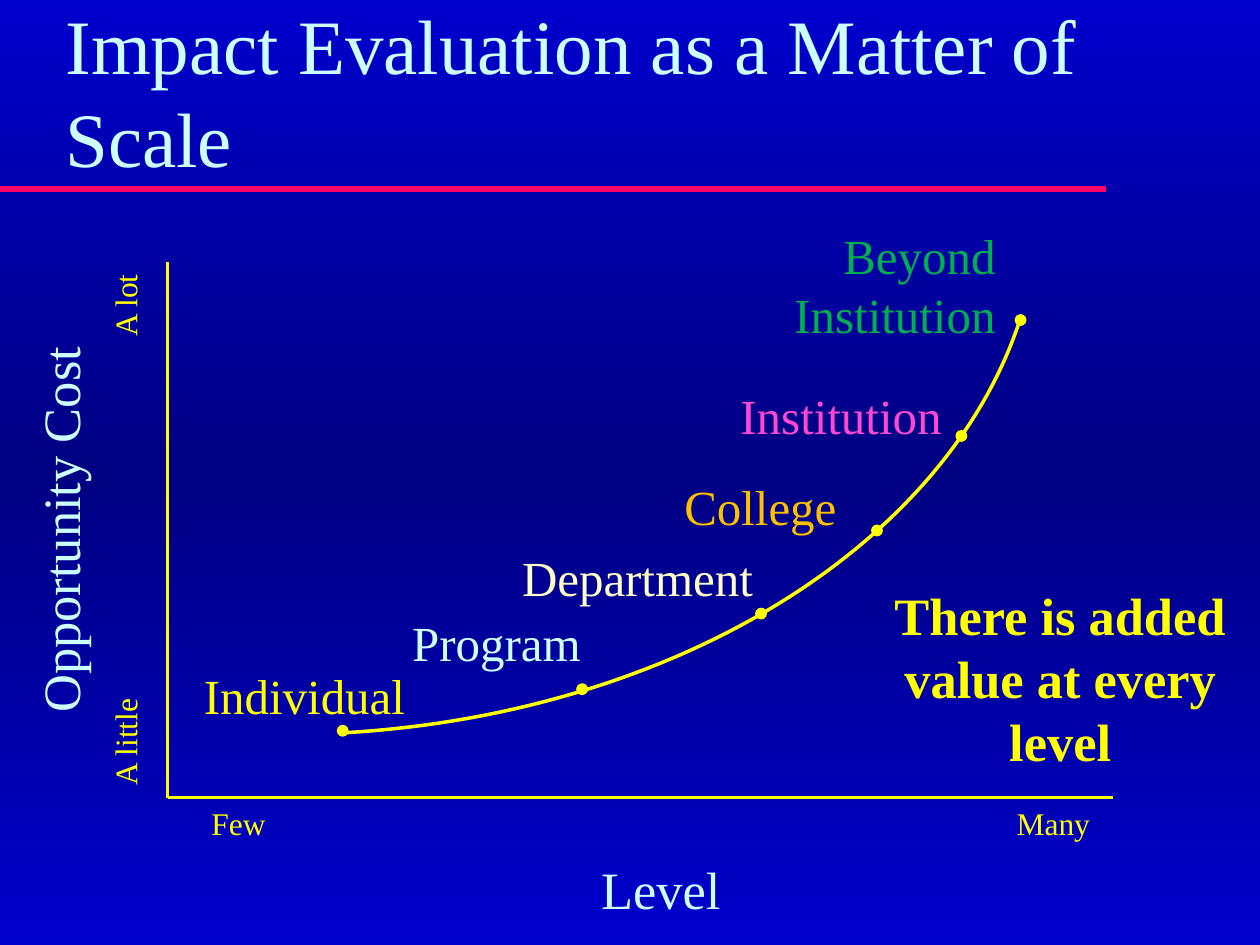
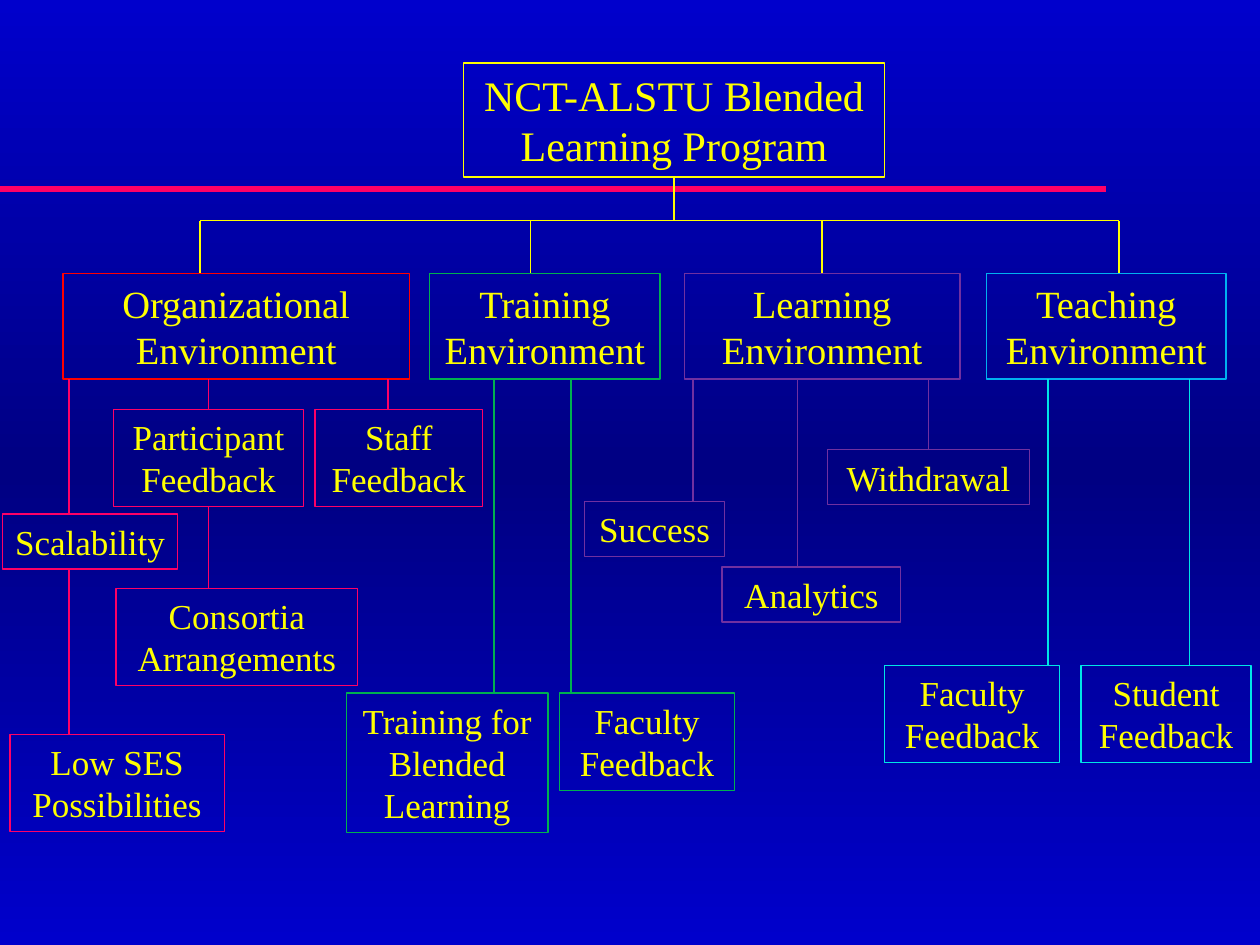
"""Build two slides: impact evaluation by scale, and the blended learning program tree."""
from copy import deepcopy
from math import cos, radians, sin

from lxml.etree import SubElement
from pptx import Presentation
from pptx.dml.color import RGBColor
from pptx.enum.shapes import MSO_CONNECTOR, MSO_SHAPE
from pptx.enum.text import MSO_ANCHOR, MSO_AUTO_SIZE, PP_ALIGN
from pptx.oxml.ns import qn
from pptx.util import Inches, Pt

FONT = "Times New Roman"
COLORS = {
    "edge": "0000CC", "mid": "000082", "rule": "FF0066", "yellow": "FFFF00",
    "ice": "CCFFFF", "cream": "FFFFC5", "gold": "FFC000", "pink": "FF47D1",
    "green": "00B050", "red": "FF0000", "purple": "7030A0", "blue": "00B0F0",
    "aqua": "00E5E6",
}
ALIGN = {"l": PP_ALIGN.LEFT, "c": PP_ALIGN.CENTER, "r": PP_ALIGN.RIGHT}

TITLE = "Impact Evaluation as a Matter of Scale"
AXIS = {"left": 1.33, "top": 2.08, "right": 8.83, "base": 6.33}
CURVE = {"x": 2.25, "y": 1.58, "wide": 6, "high": 4.25, "start": 85.5, "end": 12.8, "steps": 60}
NOTES = [
    ("Opportunity Cost", (0.17, 2.08, 0.71, 4.25), dict(size=30, color="ice", align="c", vert="vert270")),
    ("A little", (0.79, 5, 0.61, 1.33), dict(size=18, vert="vert270")),
    ("A lot", (0.79, 2.08, 0.61, 1.33), dict(size=18, align="r", vert="vert270")),
    ("Level", (4.58, 6.75, 1.33, 0.61), dict(size=30, color="ice", align="c")),
    ("Few", (1.58, 6.33, 1, 0.5), dict(size=18)),
    ("Many", (7.08, 6.33, 1.67, 0.5), dict(size=18, align="r")),
    ("There is added value at every level", (6.83, 4.58, 3.17, 1.62), dict(size=30, bold=True, align="c")),
]
STEPS = [
    ("Individual", (1.52, 5.23, 1.92, 0.57), "yellow", "l", (2.68, 5.76)),
    ("Program", (3.15, 4.81, 1.58, 0.57), "ice", "c", (4.58, 5.43)),
    ("Department", (3.98, 4.3, 2.16, 0.57), "cream", "c", (6, 4.83)),
    ("College", (5.08, 3.73, 1.91, 0.57), "gold", "c", (6.92, 4.17)),
    ("Institution", (5.72, 3.01, 1.91, 0.57), "pink", "c", (7.59, 3.42)),
    ("Beyond\nInstitution", (4.73, 1.74, 3.27, 1.04), "green", "r", (8.06, 2.5)),
]

ROOT = ("NCT-ALSTU Blended Learning Program", 3.68, 0.5, 3.34)
TRUNK, BAR, TIER = 5.36, 1.75, 2.17
BRANCHES = [
    ("Organizational Environment", 0.5, 2.75, 1.59, "red", "rule", [
        ("Scalability", 0.02, 4.08, 1.39, 1, 0.55, [
            ("Low SES\nPossibilities", 0.08, 5.83, 1.7, 2, 0.55, [])]),
        ("Participant Feedback", 0.9, 3.25, 1.51, 2, 1.67, [
            ("Consortia Arrangements", 0.92, 4.67, 1.92, 2, 1.66, [])]),
        ("Staff Feedback", 2.5, 3.25, 1.33, 2, 3.08, []),
    ]),
    ("Training Environment", 3.41, 1.83, 4.21, "green", "green", [
        ("Training for Blended Learning", 2.75, 5.5, 1.6, 3, 3.92, []),
        ("Faculty Feedback", 4.44, 5.5, 1.39, 2, 4.53, []),
    ]),
    ("Learning Environment", 5.43, 2.19, 6.53, "purple", "purple", [
        ("Success", 4.64, 3.98, 1.11, 1, 5.5, []),
        ("Analytics", 5.73, 4.5, 1.42, 1, 6.33, []),
        ("Withdrawal", 6.57, 3.57, 1.6, 1, 7.36, []),
    ]),
    ("Teaching Environment", 7.83, 1.9, 8.88, "blue", "aqua", [
        ("Faculty Feedback", 7.02, 5.28, 1.39, 2, 8.32, []),
        ("Student Feedback", 8.58, 5.28, 1.35, 2, 9.44, []),
    ]),
]


def hue(name):
    return RGBColor.from_string(COLORS[name])


def write(shape, text, size=28, color="yellow", bold=False, align="l",
          anchor=MSO_ANCHOR.TOP, vert=None, inset=0.1):
    frame = shape.text_frame
    frame.text = text
    frame.word_wrap = True
    frame.auto_size = MSO_AUTO_SIZE.NONE
    frame.vertical_anchor = anchor
    frame.margin_left = frame.margin_right = Inches(inset)
    if vert:
        frame._txBody.bodyPr.set("vert", vert)
    for para in frame.paragraphs:
        para.alignment = ALIGN[align]
        font = para.runs[0].font
        font.name, font.size, font.bold = FONT, Pt(size), bold
        font.color.rgb = hue(color)


def label(slide, text, place, **style):
    write(slide.shapes.add_textbox(*map(Inches, place)), text, **style)


def dress(shape, color, width, fill=None):
    shape.shadow.inherit = False
    if fill:
        shape.fill.solid()
        shape.fill.fore_color.rgb = hue(fill)
    else:
        shape.fill.background()
    shape.line.color.rgb = hue(color)
    shape.line.width = Pt(width)


def draw(slide, kind, place, *look):
    shape = slide.shapes.add_shape(kind, *map(Inches, place))
    dress(shape, *look)
    return shape


def bend(slide):
    points = []
    for i in range(CURVE["steps"] + 1):
        angle = radians(CURVE["start"] + (CURVE["end"] - CURVE["start"]) * i / CURVE["steps"])
        points.append((Inches(CURVE["x"] + CURVE["wide"] * cos(angle)),
                       Inches(CURVE["y"] + CURVE["high"] * sin(angle))))
    path = slide.shapes.build_freeform(*points[0])
    path.add_line_segments(points[1:], close=False)
    dress(path.convert_to_shape(), "yellow", 2)


def middle(shape):
    return (shape.left + shape.width / 2) / Inches(1)


def centred(shape, x):
    return shape is not None and abs(middle(shape) - x) < 0.03


def link(slide, start, end, color, width=1):
    line = slide.shapes.add_connector(MSO_CONNECTOR.STRAIGHT, *map(Inches, start + end))
    line.line.color.rgb = hue(color)
    line.line.width = Pt(width)
    SubElement(line._element.spPr, qn("a:effectLst"))
    return line


def drop(slide, x, top, base, color, above=None, below=None):
    head, foot = centred(above, x), centred(below, x)
    if head or foot:
        x = middle(above if head else below)
    line = link(slide, (x, top), (x, base), color)
    if head:
        line.begin_connect(above, 2)
    if foot:
        line.end_connect(below, 0)


def under(shape):
    return (shape.top + shape.height) / Inches(1)


def box(slide, text, left, top, width, rows, size, color):
    place = (left, top, width, 0.1 + rows * size * 0.0168)
    shape = draw(slide, MSO_SHAPE.RECTANGLE, place, color, 0.75)
    write(shape, text, size=size, align="c", inset=0.05)
    return shape


def grow(slide, parent, nodes, color):
    for text, left, top, width, rows, stem, kids in nodes:
        node = box(slide, text, left, top, width, rows, 20, color)
        drop(slide, stem, under(parent), top, color, above=parent, below=node)
        grow(slide, node, kids, color)


def theme(deck, slide):
    master = deck.slide_master
    fill = master.background.fill
    fill.gradient()
    fill.gradient_angle = 90
    stops = master._element.find(".//" + qn("a:gsLst"))
    stops.append(deepcopy(stops[-1]))
    for stop, spot, name in zip(fill.gradient_stops, (0, 0.5, 1), ("edge", "mid", "edge")):
        stop.position = spot
        stop.color.rgb = hue(name)
    rule = link(slide, (0, 1.5), (8.78, 1.5), "rule", 4)
    master.shapes._spTree.append(rule._element)


def scale(slide):
    title = slide.shapes.title
    title.left, title.top, title.width, title.height = map(Inches, (0.42, 0.29, 8.5, 1.21))
    write(title, TITLE, size=44, color="ice", anchor=MSO_ANCHOR.BOTTOM)
    foot = (AXIS["left"], AXIS["base"])
    link(slide, (AXIS["left"], AXIS["top"]), foot, "yellow", 1.5)
    link(slide, foot, (AXIS["right"], AXIS["base"]), "yellow", 1.5)
    bend(slide)
    for text, place, style in NOTES:
        label(slide, text, place, **style)
    for text, place, color, align, dot in STEPS:
        draw(slide, MSO_SHAPE.OVAL, dot + (0.08, 0.08), "yellow", 1, "yellow")
        label(slide, text, place, color=color, align=align)


def tree(slide):
    root = box(slide, *ROOT, 2, 24, "yellow")
    drop(slide, TRUNK, under(root), BAR, "yellow", above=root)
    link(slide, (BRANCHES[0][3], BAR), (BRANCHES[-1][3], BAR), "yellow")
    for text, left, width, stem, edge, color, kids in BRANCHES:
        head = box(slide, text, left, TIER, width, 2, 22, edge)
        drop(slide, stem, BAR, TIER, "yellow", below=head)
        grow(slide, head, kids, color)


def main():
    deck = Presentation()
    deck.slide_width, deck.slide_height = Inches(10), Inches(7.5)
    first = deck.slides.add_slide(deck.slide_layouts[5])
    theme(deck, first)
    scale(first)
    tree(deck.slides.add_slide(deck.slide_layouts[6]))
    deck.save("out.pptx")


if __name__ == "__main__":
    main()
